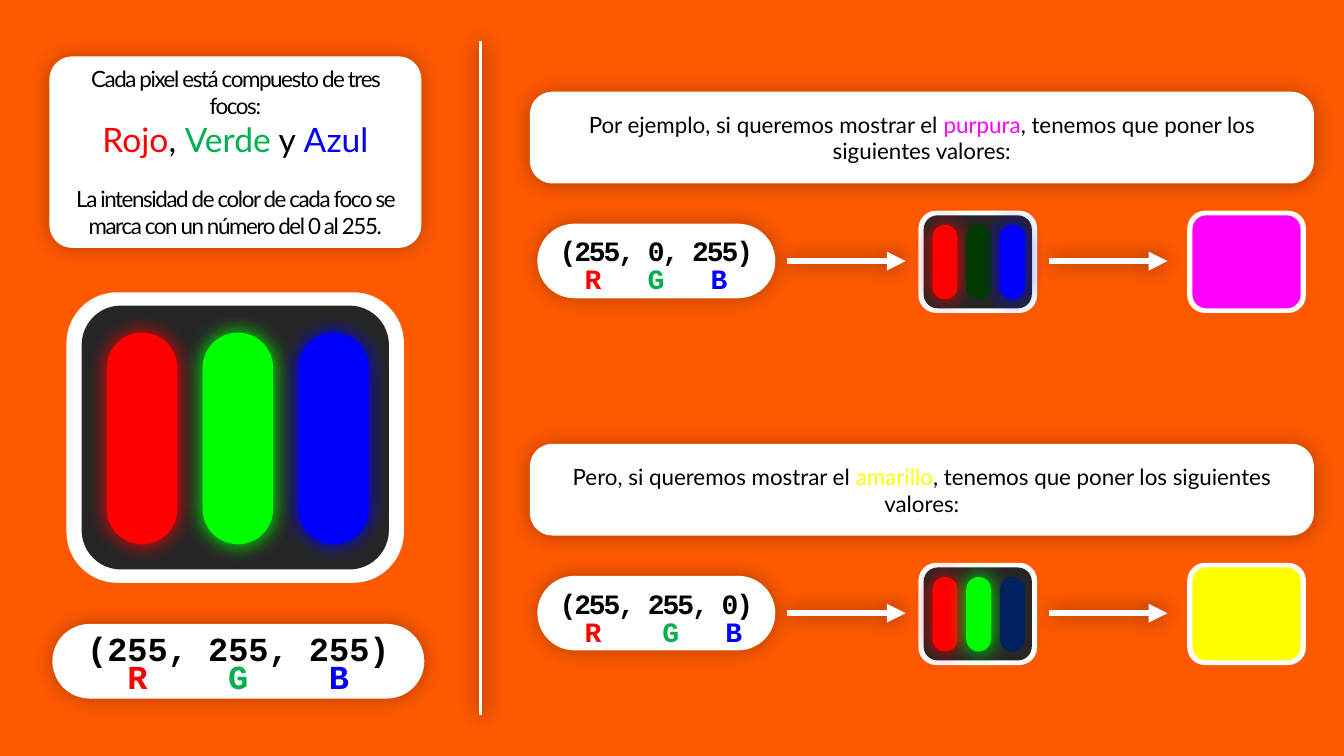
import pptx
import pptx.util
import pptx.dml.color
import pptx.enum.shapes
import pptx.enum.text
import pptx.oxml.ns
from lxml import etree

Pt = pptx.util.Pt
RGB = pptx.dml.color.RGBColor.from_string
qn = pptx.oxml.ns.qn
ALIGN = pptx.enum.text.PP_ALIGN
ANCHOR = pptx.enum.text.MSO_ANCHOR

COLORS = {
    "background": "FF5900", "white": "FFFFFF", "black": "000000",
    "panel": "262626", "red": "FF0000", "green": "00FF00", "blue": "0000FF",
    "green_off": "003A00", "blue_off": "002060", "green_text": "00B050",
    "purple": "FF00FF", "yellow": "FFFF00",
}
LIT = {"red", "green", "blue"}

prs = pptx.Presentation()
prs.slide_width, prs.slide_height = Pt(960), Pt(540)
s = prs.slides.add_slide(prs.slide_layouts[6])
s.background.fill.solid()
s.background.fill.fore_color.rgb = RGB(COLORS["background"])


def add_shadow(sp, color, alpha):
    spPr = sp._element.spPr
    effects = spPr.find(qn("a:effectLst"))
    if effects is None:
        effects = etree.SubElement(spPr, qn("a:effectLst"))
    outer = etree.SubElement(effects, qn("a:outerShdw"), blurRad=str(Pt(15)),
                             dist="0", dir="0", algn="ctr", rotWithShape="0")
    clr = etree.SubElement(outer, qn("a:srgbClr"), val=COLORS[color])
    etree.SubElement(clr, qn("a:alpha"), val=str(alpha * 1000))


def add_box(x, y, w, h, radius, fill, shadow=None, alpha=100):
    sp = s.shapes.add_shape(pptx.enum.shapes.MSO_SHAPE.ROUNDED_RECTANGLE,
                            Pt(x), Pt(y), Pt(w), Pt(h))
    sp.adjustments[0] = radius
    sp.fill.solid()
    sp.fill.fore_color.rgb = RGB(COLORS[fill])
    sp.line.fill.background()
    sp.shadow.inherit = False
    if shadow:
        add_shadow(sp, shadow, alpha)
    return sp


ROW_TOPS = (65.5, 317)

lines = [(343.5, 29.5, 343.5, 510.5, 2.25, 100, False)]
for top in ROW_TOPS:
    for x in (562.5, 749.5):
        lines.append((x, top + 121, x + 84.5, top + 121, 4.5, 50, True))
for x1, y1, x2, y2, width, alpha, arrow in lines:
    c = s.shapes.add_connector(pptx.enum.shapes.MSO_CONNECTOR.STRAIGHT,
                               Pt(x1), Pt(y1), Pt(x2), Pt(y2))
    c.line.color.rgb = RGB(COLORS["white"])
    c.line.width = Pt(width)
    if arrow:
        etree.SubElement(c.line._get_or_add_ln(), qn("a:tailEnd"), type="triangle")
    add_shadow(c, "black", alpha)

screens = [
    (47.5, 208.8, 1, "panel", ("red", "green", "blue")),
    (656, ROW_TOPS[0] + 85, 0.352, "panel", ("red", "green_off", "blue")),
    (848, ROW_TOPS[0] + 85, 0.352, "purple", ()),
    (656, ROW_TOPS[1] + 85, 0.352, "panel", ("red", "green", "blue_off")),
    (848, ROW_TOPS[1] + 85, 0.352, "yellow", ()),
]
for x, y, k, fill, lamps in screens:
    add_box(x, y, 241 * k, 207.5 * k, 0.175, "white")
    add_box(x + 10.8 * k, y + 9.5 * k, 219.5 * k, 188.5 * k, 0.149, fill)
    for i, lamp in enumerate(lamps):
        add_box(x + (28.8 + 68.4 * i) * k, y + 28.8 * k, 50.4 * k, 151.2 * k,
                0.5, lamp, lamp if lamp in LIT else None)

ending = ", tenemos que poner los siguientes valores:"
captions = [
    (35.3, 40.3, 265.7, 136.8, 0.12, [
        (0, 16, -1, [("Cada pixel está compuesto de tres focos:", "black")]),
        (0, 24, 0, [("Rojo", "red"), (", ", "black"), ("Verde", "green_text"),
                    (" y ", "black"), ("Azul", "blue")]),
        (19, 16, -1, [("La intensidad de color de cada foco se marca con un "
                       "número del 0 al 255.", "black")]),
    ]),
    (378.5, ROW_TOPS[0], 560, 65.5, 0.246, [
        (0, 16, 0, [("Por ejemplo, si queremos mostrar el ", "black"),
                    ("purpura", "purple"), (ending, "black")]),
    ]),
    (378.5, ROW_TOPS[1], 560, 65.5, 0.246, [
        (0, 16, 0, [("Pero, si queremos mostrar el ", "black"),
                    ("amarillo", "yellow"), (ending, "black")]),
    ]),
]
for x, y, w, h, radius, paragraphs in captions:
    tf = add_box(x, y, w, h, radius, "white", "black", 30).text_frame
    tf.word_wrap = True
    tf.vertical_anchor = ANCHOR.MIDDLE
    for i, (before, size, spacing, runs) in enumerate(paragraphs):
        p = tf.add_paragraph() if i else tf.paragraphs[0]
        p.alignment = ALIGN.CENTER
        p.space_before = Pt(before)
        for text, color in runs:
            r = p.add_run()
            r.text = text
            r.font.name = "Lato"
            r.font.size = Pt(size)
            r.font.color.rgb = RGB(COLORS[color])
            r._r.get_or_add_rPr().set("spc", str(spacing * 100))

pills = [
    (37.4, 445.7, 265.7, "(255, 255, 255)", 24, 0, (53, 125, 197)),
    (383.8, ROW_TOPS[0] + 94.3, 170, "(255, 0, 255)", 20, -1.5, (32, 77, 122)),
    (383.8, ROW_TOPS[1] + 94.3, 170, "(255, 255, 0)", 20, -1.5, (32, 87.5, 132.5)),
]
for x, y, w, values, size, spacing, stops in pills:
    tf = add_box(x, y, w, 53.3, 0.5, "white", "black", 30).text_frame
    tf.word_wrap = True
    tf.vertical_anchor = ANCHOR.TOP
    tf.margin_left = tf.margin_right = 0
    tf.text = values
    tf.paragraphs[0].alignment = ALIGN.CENTER
    tf.paragraphs[0].runs[0].font.color.rgb = RGB(COLORS["black"])
    p = tf.add_paragraph()
    p.alignment = ALIGN.LEFT
    for letter, color in (("R", "red"), ("G", "green_text"), ("B", "blue")):
        r = p.add_run()
        r.text = "\t" + letter
        r.font.color.rgb = RGB(COLORS[color])
    for p in tf.paragraphs:
        p.line_spacing = Pt(20)
        for r in p.runs:
            r.font.name = "Courier New"
            r.font.size = Pt(size)
            r.font.bold = True
            r._r.get_or_add_rPr().set("spc", str(int(spacing * 100)))
    tabs = etree.SubElement(tf.paragraphs[1]._p.get_or_add_pPr(), qn("a:tabLst"))
    for stop in stops:
        etree.SubElement(tabs, qn("a:tab"), pos=str(Pt(stop)), algn="ctr")

prs.save("out.pptx")
